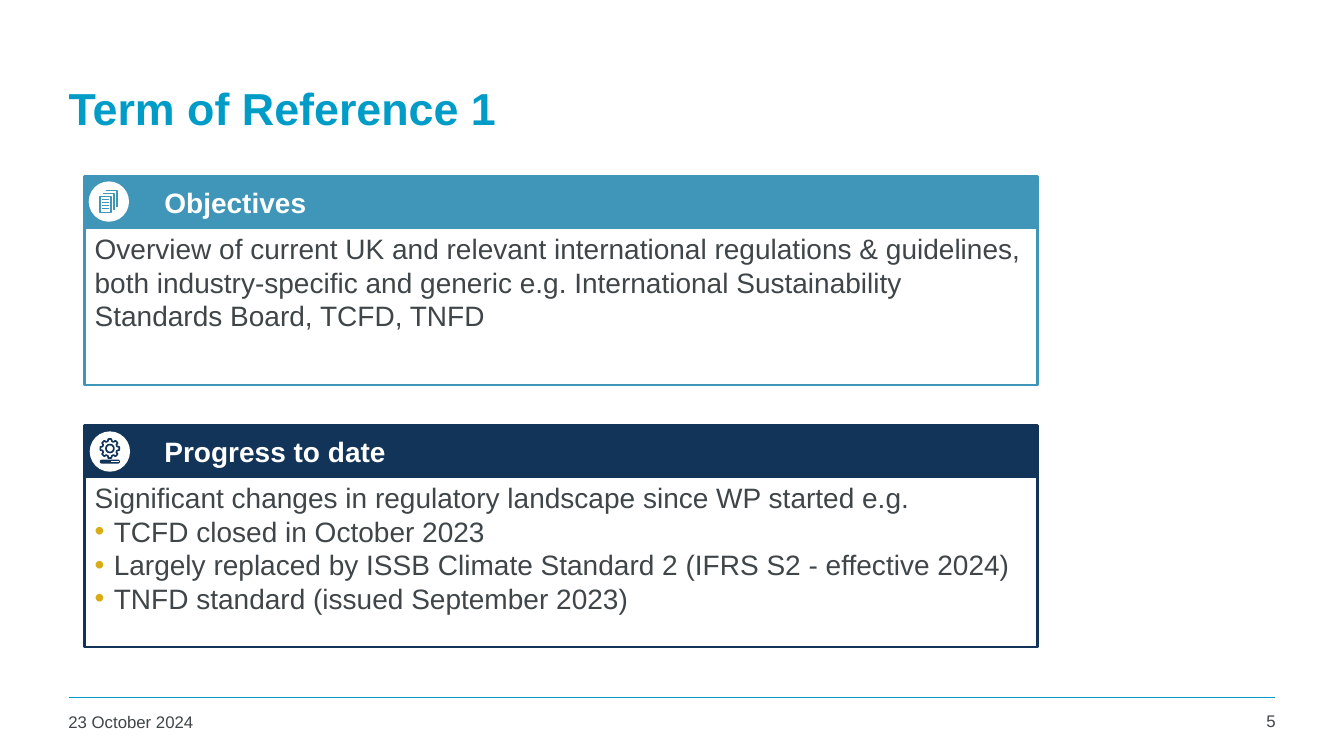
from math import cos, pi, sin

from lxml.etree import SubElement
from pptx import Presentation
from pptx.dml.color import RGBColor
from pptx.enum.shapes import MSO_CONNECTOR, MSO_SHAPE
from pptx.enum.text import MSO_ANCHOR, PP_ALIGN
from pptx.oxml.ns import qn
from pptx.util import Inches, Pt

COLORS = {name: RGBColor.from_string(value) for name, value in {
    "title": "009CC8", "objectives": "4096B8", "progress": "113458",
    "text": "3F4548", "bullet": "D9AB16", "white": "FFFFFF"}.items()}

prs = Presentation()
prs.slide_width, prs.slide_height = Inches(13.33), Inches(7.5)
slide = prs.slides.add_slide(prs.slide_layouts[5])
shapes = slide.shapes


def paint(shape, fill=None, line=None, width=1):
    """Set fill and outline by colour name; None leaves that part empty."""
    shape.shadow.inherit = False
    if fill:
        shape.fill.solid()
        shape.fill.fore_color.rgb = COLORS[fill]
    else:
        shape.fill.background()
    if line:
        shape.line.color.rgb = COLORS[line]
        shape.line.width = Pt(width)
    else:
        shape.line.fill.background()
    return shape


def write(paragraph, text, size, color, bold=False, align=PP_ALIGN.LEFT):
    paragraph.alignment = align
    run = paragraph.add_run()
    run.text = text
    run.font.name, run.font.size, run.font.bold = "Arial", Pt(size), bold
    run.font.color.rgb = COLORS[color]


# Title
title = shapes.title
title.left, title.top, title.width, title.height = map(Inches, (0.58, 0.44, 12.09, 1.25))
title.text_frame.vertical_anchor = MSO_ANCHOR.MIDDLE
write(title.text_frame.paragraphs[0], "Term of Reference 1", 32, "title", bold=True)

# Panels: heading, colour, top, body height, introduction, bullets
panels = [
    ("Objectives", "objectives", 1.75, 1.57,
     "Overview of current UK and relevant international regulations & guidelines, "
     "both industry-specific and generic e.g. International Sustainability "
     "Standards Board, TCFD, TNFD", []),
    ("Progress to date", "progress", 4.22, 1.7,
     "Significant changes in regulatory landscape since WP started e.g.",
     ["TCFD closed in October 2023",
      "Largely replaced by ISSB Climate Standard 2 (IFRS S2 - effective 2024)",
      "TNFD standard (issued September 2023)"]),
]
for heading, color, top, body_height, introduction, bullets in panels:
    body = shapes.add_shape(MSO_SHAPE.RECTANGLE, Inches(0.84), Inches(top + 0.5),
                            Inches(9.45), Inches(body_height))
    paint(body, "white", color, 2)
    body.text_frame.word_wrap = True
    body.text_frame.vertical_anchor = MSO_ANCHOR.TOP
    write(body.text_frame.paragraphs[0], introduction, 20, "text")
    for bullet in bullets:
        item = body.text_frame.add_paragraph()
        properties = item._p.get_or_add_pPr()
        properties.set("marL", str(Inches(0.19)))
        properties.set("indent", str(Inches(-0.19)))
        bullet_color = SubElement(properties, qn("a:buClr"))
        SubElement(bullet_color, qn("a:srgbClr"), val=str(COLORS["bullet"]))
        SubElement(properties, qn("a:buFont"), typeface="Arial")
        SubElement(properties, qn("a:buChar"), char="•")
        write(item, bullet, 20, "text")

    header = shapes.add_shape(MSO_SHAPE.RECTANGLE, Inches(0.84), Inches(top),
                              Inches(9.45), Inches(0.51))
    paint(header, color, color, 2)
    header.text_frame.margin_left = Inches(0.79)
    header.text_frame.vertical_anchor = MSO_ANCHOR.MIDDLE
    write(header.text_frame.paragraphs[0], heading, 20, "white", bold=True)

# Icon discs
for left, top in [(0.88, 1.8), (0.89, 4.28)]:
    paint(shapes.add_shape(MSO_SHAPE.OVAL, Inches(left), Inches(top),
                           Inches(0.4), Inches(0.4)), "white")

# Document icon: front page with two pages behind it
paint(shapes.add_shape(MSO_SHAPE.RECTANGLE, Inches(0.99), Inches(1.95),
                       Inches(0.11), Inches(0.16)), "white", "objectives", 1.2)
for step in range(2):
    x, y = 1.02 + 0.03 * step, 1.92 - 0.03 * step
    edge = shapes.build_freeform(Inches(x), Inches(y))
    edge.add_line_segments([(Inches(x + 0.11), Inches(y)),
                            (Inches(x + 0.11), Inches(y + 0.16))], close=False)
    paint(edge.convert_to_shape(), None, "objectives", 1.2)

# Gear icon: eight teeth, each with two outer and two inner corners
outline = []
for tooth in range(8):
    for offset, radius in [(-0.27, 0.075), (-0.16, 0.095), (0.16, 0.095), (0.27, 0.075)]:
        angle = tooth * pi / 4 + offset
        outline.append((Inches(1.09 + radius * cos(angle)),
                        Inches(4.45 + radius * sin(angle))))
gear = shapes.build_freeform(*outline[0])
gear.add_line_segments(outline[1:])
paint(gear.convert_to_shape(), "white", "progress", 1.2)
paint(shapes.add_shape(MSO_SHAPE.OVAL, Inches(1.05), Inches(4.41),
                       Inches(0.08), Inches(0.08)), "white", "progress", 1.2)
progress_bar = shapes.add_shape(MSO_SHAPE.ROUNDED_RECTANGLE, Inches(0.99), Inches(4.56),
                                Inches(0.2), Inches(0.04))
progress_bar.adjustments[0] = 0.5
paint(progress_bar, "progress")

# Straight lines: footer rule, lines on the page, unfilled end of the progress bar
rules = [(0.68, 12.65, 6.92, "title", 1), (1.1, 1.18, 4.58, "white", 0.75)]
rules += [(1.01, 1.08, 1.98 + 0.03 * row, "objectives", 0.9) for row in range(4)]
for start, end, y, color, width in rules:
    rule = shapes.add_connector(MSO_CONNECTOR.STRAIGHT, Inches(start), Inches(y),
                                Inches(end), Inches(y))
    rule.line.color.rgb = COLORS[color]
    rule.line.width = Pt(width)
    SubElement(rule._element.spPr, qn("a:effectLst"))

# Footer
for text, left, top, width, align in [
        ("23 October 2024", 0.58, 7.01, 2.94, PP_ALIGN.LEFT),
        ("5", 11.81, 7, 0.94, PP_ALIGN.RIGHT)]:
    footer = shapes.add_textbox(Inches(left), Inches(top), Inches(width), Inches(0.36))
    footer.text_frame.word_wrap = True
    write(footer.text_frame.paragraphs[0], text, 12, "text", align=align)

prs.save("out.pptx")
